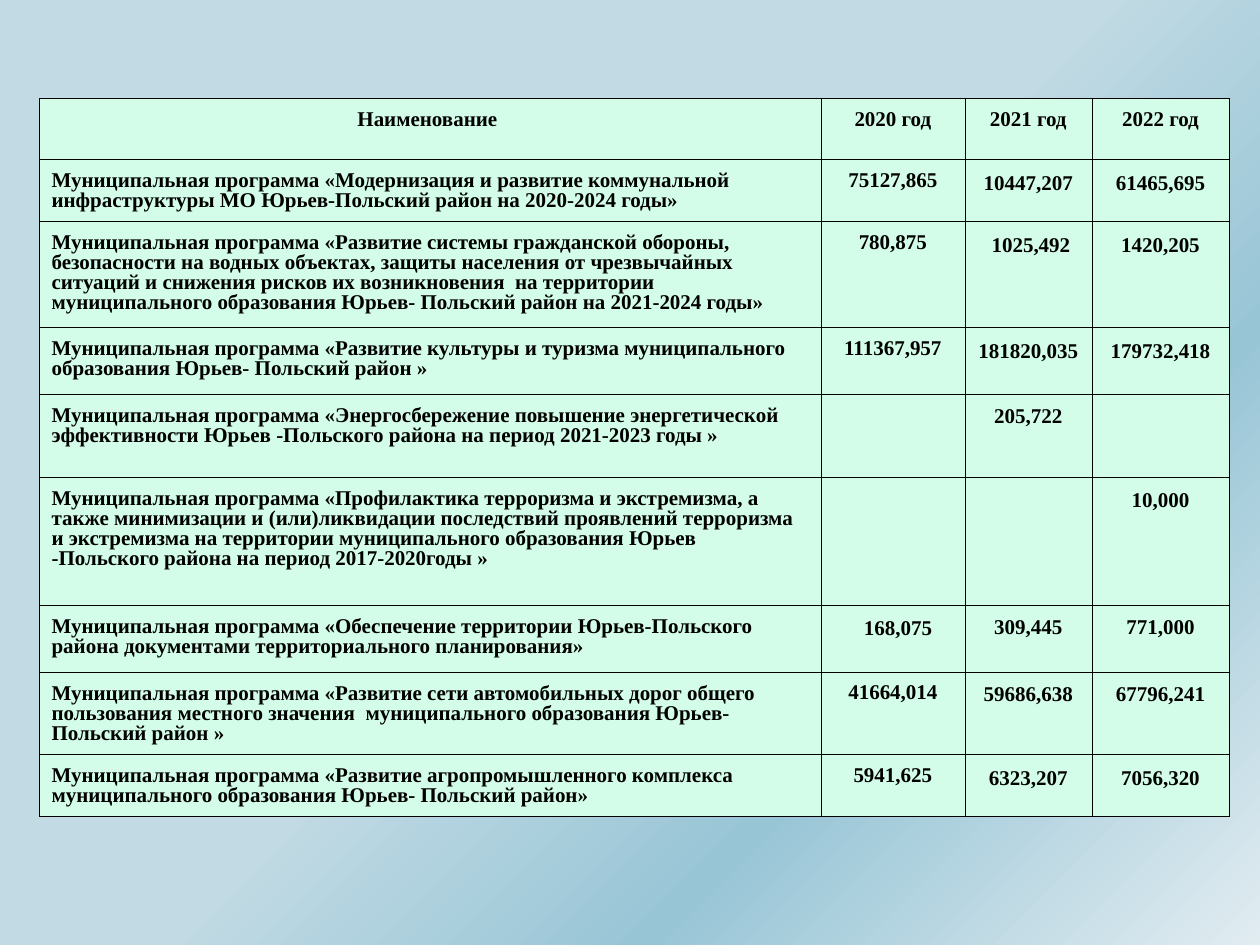
from lxml import etree
from pptx import Presentation
from pptx.dml.color import RGBColor
from pptx.enum.text import PP_ALIGN
from pptx.oxml.ns import qn
from pptx.util import Cm, Pt

CENTER, LEFT = PP_ALIGN.CENTER, PP_ALIGN.LEFT
FONT = "Times New Roman"
COLORS = {"text": "000000", "border": "000000", "cell": "D3FDE8"}
BACKGROUND_STOPS = [(50, "C1DAE4"), (72, "98C5D6"), (100, "E1ECF1")]
PREFIX = "Муниципальная программа "
HEADER = ("Наименование ", "2020 год", "2021 год", "2022 год")
PROGRAMS = [
    ("«Модернизация и развитие коммунальной инфраструктуры МО Юрьев-Польский район "
     "на 2020-2024 годы»", "75127,865", "10447,207", "61465,695"),
    ("«Развитие системы гражданской обороны, безопасности на водных объектах, защиты "
     "населения от чрезвычайных ситуаций и снижения рисков их возникновения  на территории "
     "муниципального образования Юрьев- Польский район на 2021-2024 годы»",
     "780,875", " 1025,492", "1420,205"),
    ("«Развитие культуры и туризма муниципального образования Юрьев- Польский район »",
     "111367,957", "181820,035", "179732,418"),
    ("«Энергосбережение повышение энергетической эффективности Юрьев -Польского района "
     "на период 2021-2023 годы »", "", "205,722", ""),
    ("«Профилактика терроризма и экстремизма, а также минимизации и (или)ликвидации "
     "последствий проявлений терроризма и экстремизма на территории муниципального "
     "образования Юрьев -Польского района на период 2017-2020годы »", "", "", "10,000"),
    ("«Обеспечение территории Юрьев-Польского района документами территориального "
     "планирования»", "168,075", "309,445", "771,000"),
    ("«Развитие сети автомобильных дорог общего пользования местного значения  "
     "муниципального образования Юрьев- Польский район »",
     "41664,014", "59686,638", "67796,241"),
    ("«Развитие агропромышленного комплекса муниципального образования Юрьев- Польский район»",
     "5941,625", "6323,207", "7056,320"),
]
ROWS = [HEADER] + [(PREFIX + name, *values) for name, *values in PROGRAMS]
COLUMN_WIDTHS = [15.76, 2.9, 2.56, 2.77]
ROW_HEIGHTS = [1.23, 1.25, 2.13, 1.35, 1.68, 2.57, 1.35, 1.67, 1.25]
RAISED_VALUES = {"205,722", "10,000", "309,445", "771,000", "41664,014", "59686,638", "67796,241"}
INDENTED_VALUE = "168,075"


def paint_background(slide):
    """Fill the slide with the diagonal gradient."""
    fill = slide.background.fill
    fill.gradient()
    fill.gradient_angle = 315
    stops = slide.element.find(".//" + qn("a:gsLst"))
    for stop in list(stops):
        stops.remove(stop)
    for position, color in BACKGROUND_STOPS:
        stop = etree.SubElement(stops, qn("a:gs"), pos=str(position * 1000))
        etree.SubElement(stop, qn("a:srgbClr"), val=color)


def format_cell(cell):
    """Give a cell its thin borders, fill and margins."""
    properties = cell._tc.get_or_add_tcPr()
    for side in ("lnL", "lnR", "lnT", "lnB"):
        line = etree.SubElement(properties, qn("a:" + side), w=str(Pt(0.11)))
        line_fill = etree.SubElement(line, qn("a:solidFill"))
        etree.SubElement(line_fill, qn("a:srgbClr"), val=COLORS["border"])
    cell.fill.solid()
    cell.fill.fore_color.rgb = RGBColor.from_string(COLORS["cell"])
    cell.margin_left = cell.margin_right = cell.margin_top = Cm(0.25)
    cell.margin_bottom = Cm(0.13)


def write_cell(cell, text, alignment, tight):
    """Write bold text into a cell."""
    if text in RAISED_VALUES:
        cell.margin_top = Cm(0.23)
    if text == INDENTED_VALUE:
        cell.margin_left = Cm(0.46)
    paragraph = cell.text_frame.paragraphs[0]
    paragraph.alignment = alignment
    if tight:
        paragraph.line_spacing = 0.86
    run = paragraph.add_run()
    run.text = text
    run.font.name = FONT
    run.font.size = Pt(12)
    run.font.bold = True
    run.font.color.rgb = RGBColor.from_string(COLORS["text"])


def add_program_table(slide):
    """Add the table of programs and yearly amounts."""
    table = slide.shapes.add_table(
        len(ROWS), len(COLUMN_WIDTHS), Cm(0.79), Cm(1.98),
        Cm(sum(COLUMN_WIDTHS)), Cm(sum(ROW_HEIGHTS))).table
    for column, width in zip(table.columns, COLUMN_WIDTHS):
        column.width = Cm(width)
    for row, height in zip(table.rows, ROW_HEIGHTS):
        row.height = Cm(height)
    for row_index, texts in enumerate(ROWS):
        for column_index, text in enumerate(texts):
            cell = table.cell(row_index, column_index)
            format_cell(cell)
            if text:
                alignment = LEFT if row_index and not column_index else CENTER
                tight = text != INDENTED_VALUE and (row_index == 0 or column_index < 2)
                write_cell(cell, text, alignment, tight)


def main():
    """Build and save the presentation."""
    presentation = Presentation()
    presentation.slide_width, presentation.slide_height = Cm(25.4), Cm(19.05)
    slide = presentation.slides.add_slide(presentation.slide_layouts[6])
    paint_background(slide)
    add_program_table(slide)
    presentation.save("out.pptx")


if __name__ == "__main__":
    main()
